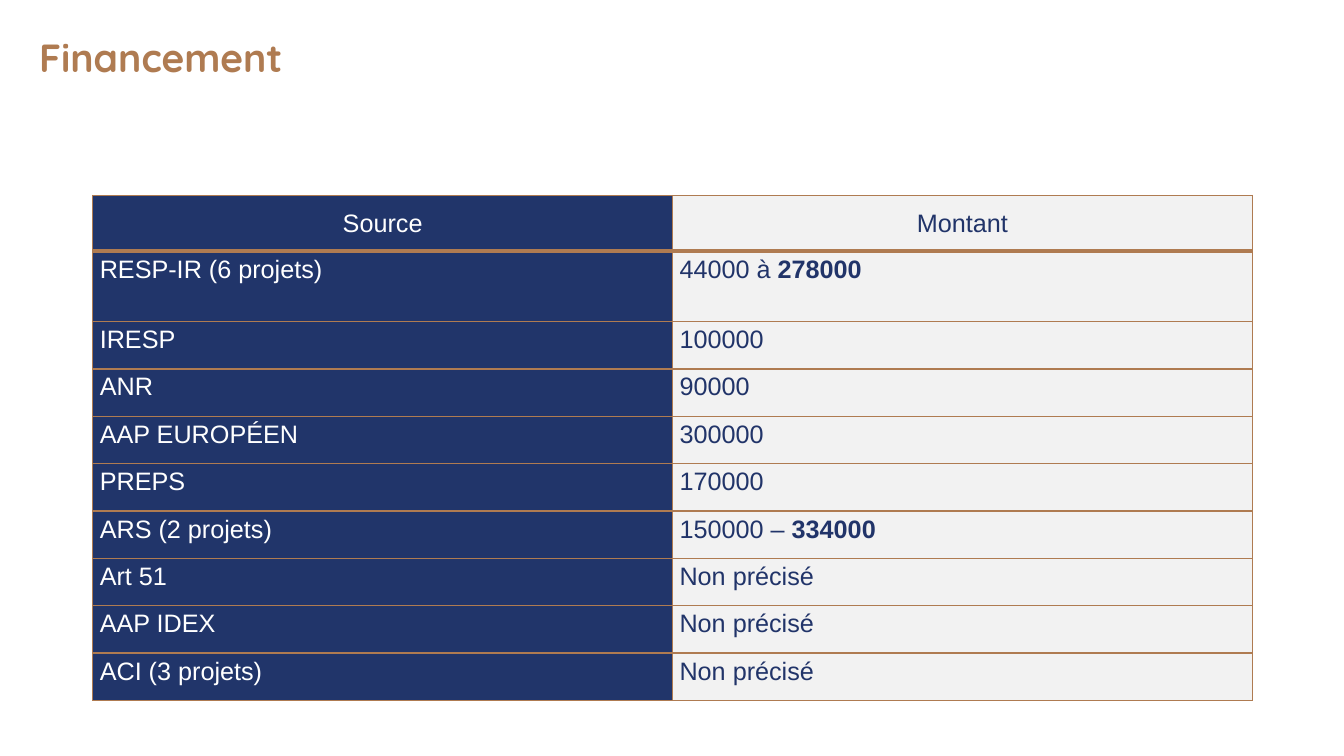
from lxml.etree import SubElement
from pptx import Presentation
from pptx.dml.color import RGBColor
from pptx.enum.text import MSO_ANCHOR, PP_ALIGN
from pptx.oxml.ns import qn
from pptx.util import Emu, Pt

TITLE = "Financement"
HEAD = ("Source", "Montant", "")
# Source, amount, bold end of the amount
FUNDS = [
    ("RESP-IR (6 projets)", "44000 à ", "278000"),
    ("IRESP", "100000", ""),
    ("ANR", "90000", ""),
    ("AAP EUROPÉEN", "300000", ""),
    ("PREPS", "170000", ""),
    ("ARS (2 projets)", "150000 – ", "334000"),
    ("Art 51", "Non précisé", ""),
    ("AAP IDEX", "Non précisé", ""),
    ("ACI (3 projets)", "Non précisé", ""),
]
BROWN, NAVY, INK, GREY, WHITE = "AF7B51", "21356A", "213469", "F2F2F2", "FFFFFF"
HEIGHTS = [55, 70] + [47] * (len(FUNDS) - 1)
WIDTH = 575


def px(n):
    return Emu(n * 9144)


def color(code):
    return RGBColor.from_string(code)


def style(run, size, face, code, bold=False):
    font = run.font
    font.size, font.name, font.bold = Pt(size), face, bold
    font.color.rgb = color(code)


def border(cell, sides):
    props = cell._tc.get_or_add_tcPr()
    for side, width in sides.items():
        line = SubElement(props, qn(f"a:ln{side}"), w=str(Pt(width)))
        fill = SubElement(line, qn("a:solidFill"))
        SubElement(fill, qn("a:srgbClr"), val=BROWN)


def fill_cell(cell, text, strong, paint, ink, top):
    border(cell, {"L": 1, "R": 1, "T": 1, "B": 3 if top else 1})
    cell.fill.solid()
    cell.fill.fore_color.rgb = color(paint)
    cell.margin_left = cell.margin_right = px(7)
    cell.margin_top = cell.margin_bottom = 0
    para = cell.text_frame.paragraphs[0]
    para.text = text
    para.alignment = PP_ALIGN.CENTER if top else PP_ALIGN.LEFT
    para.line_spacing = 1.5 if top else 1.15
    para.space_after = Pt(8)
    style(para.runs[0], 18, "Arial", ink)
    if strong:
        run = para.add_run()
        run.text = strong
        style(run, 18, "Arial", ink, True)


deck = Presentation()
deck.slide_width, deck.slide_height = px(1333), px(750)
slide = deck.slides.add_slide(deck.slide_layouts[6])

# Title
box = slide.shapes.add_textbox(px(29), px(23), px(1242), px(84))
frame = box.text_frame
frame.word_wrap = True
frame.vertical_anchor = MSO_ANCHOR.TOP
frame.margin_left = frame.margin_right = px(10)
frame.margin_top = frame.margin_bottom = px(10)
frame.text = TITLE
style(frame.paragraphs[0].runs[0], 28, "Quicksand", BROWN, True)

# Funding table
rows = [HEAD] + FUNDS
table = slide.shapes.add_table(
    len(rows), 2, px(92), px(194), px(2 * WIDTH), px(sum(HEIGHTS))).table
table.first_row = table.horz_banding = False
for col in table.columns:
    col.width = px(WIDTH)
for r, (source, amount, strong) in enumerate(rows):
    table.rows[r].height = px(HEIGHTS[r])
    fill_cell(table.cell(r, 0), source, "", NAVY, WHITE, r == 0)
    fill_cell(table.cell(r, 1), amount, strong, GREY, INK, r == 0)

deck.save("out.pptx")
